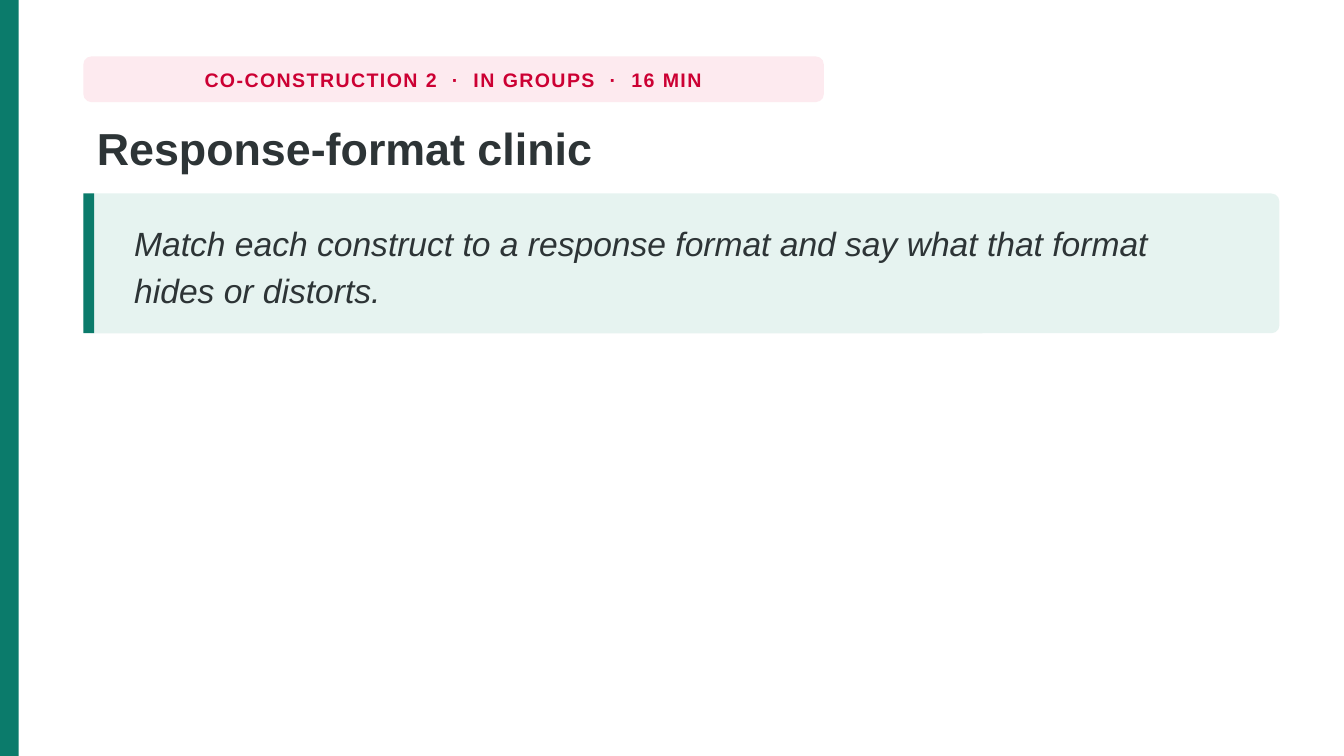
from pptx import Presentation
from pptx.dml.color import RGBColor
from pptx.enum.shapes import MSO_SHAPE
from pptx.enum.text import MSO_ANCHOR, MSO_AUTO_SIZE, PP_ALIGN
from pptx.util import Inches, Pt

RECT, ROUND = MSO_SHAPE.RECTANGLE, MSO_SHAPE.ROUNDED_RECTANGLE
TOP, MIDDLE = MSO_ANCHOR.TOP, MSO_ANCHOR.MIDDLE
LEFT, CENTER = PP_ALIGN.LEFT, PP_ALIGN.CENTER

TAG = "CO-CONSTRUCTION 2  ·  IN GROUPS  ·  16 MIN"
TITLE = "Response-format clinic"
PROMPT = ("Match each construct to a response format and say what "
          "that format hides or distorts.")

THEME = {
    "font": "Arial",
    "accent": "0B7B6B", "panel": "E6F3F0", "ink": "2D3436",
    "tag": "CC0033", "tag_fill": "FDEAEF", "paper": "FFFFFF",
    "tag_size": 10.5, "title_size": 24, "prompt_size": 18,
}

WIDTH = 10
HEIGHT = WIDTH * 9 / 16
MARGIN, CONTENT_W = 0.62, 8.9
RADIUS = 0.06
PANEL_TOP, PANEL_H = 1.44, 1.04
TAG_BOX = (MARGIN, 0.42, 5.51, 0.34)
TITLE_BOX = (MARGIN, 0.84, CONTENT_W, 0.56)
PANEL_BOX = (MARGIN, PANEL_TOP, CONTENT_W, PANEL_H)
PROMPT_BOX = (0.9, PANEL_TOP + 0.05, 8.35, PANEL_H - 0.1)


def color(name):
    return RGBColor.from_string(THEME[name])


def add_block(s, kind, box, fill):
    sp = s.shapes.add_shape(kind, *map(Inches, box))
    sp.shadow.inherit = False
    sp.fill.solid()
    sp.fill.fore_color.rgb = color(fill)
    sp.line.fill.background()
    if kind == ROUND:
        sp.adjustments[0] = RADIUS / box[3]


def write(sp, text, size, ink, anchor=TOP, align=LEFT, spacing=1.0,
          bold=False, italic=False, wrap=True):
    tf = sp.text_frame
    tf.text = text
    tf.word_wrap = wrap
    tf.auto_size = MSO_AUTO_SIZE.NONE
    tf.vertical_anchor = anchor
    p = tf.paragraphs[0]
    p.alignment = align
    p.line_spacing = spacing
    r = p.runs[0]
    r.font.name = THEME["font"]
    r.font.size = Pt(THEME[size])
    r.font.color.rgb = color(ink)
    r.font.bold = bold
    r.font.italic = italic
    return r


def add_text(s, box, *args, **style):
    return write(s.shapes.add_textbox(*map(Inches, box)), *args, **style)


prs = Presentation()
prs.slide_width, prs.slide_height = Inches(WIDTH), Inches(HEIGHT)
s = prs.slides.add_slide(prs.slide_layouts[5])
s.background.fill.solid()
s.background.fill.fore_color.rgb = color("paper")

title = s.shapes.title
title.left, title.top, title.width, title.height = map(Inches, TITLE_BOX)
write(title, TITLE, "title_size", "ink", spacing=1.02, bold=True)

add_block(s, RECT, (0, 0, 0.14, HEIGHT), "accent")
add_block(s, ROUND, TAG_BOX, "tag_fill")
r = add_text(s, TAG_BOX, TAG, "tag_size", "tag", anchor=MIDDLE,
             align=CENTER, bold=True, wrap=False)
r._r.get_or_add_rPr().set("spc", "80")

add_block(s, ROUND, PANEL_BOX, "panel")
add_block(s, RECT, (MARGIN, PANEL_TOP, 0.08, PANEL_H), "accent")
add_text(s, PROMPT_BOX, PROMPT, "prompt_size", "ink", anchor=MIDDLE,
         spacing=1.16, italic=True)

prs.save("out.pptx")
